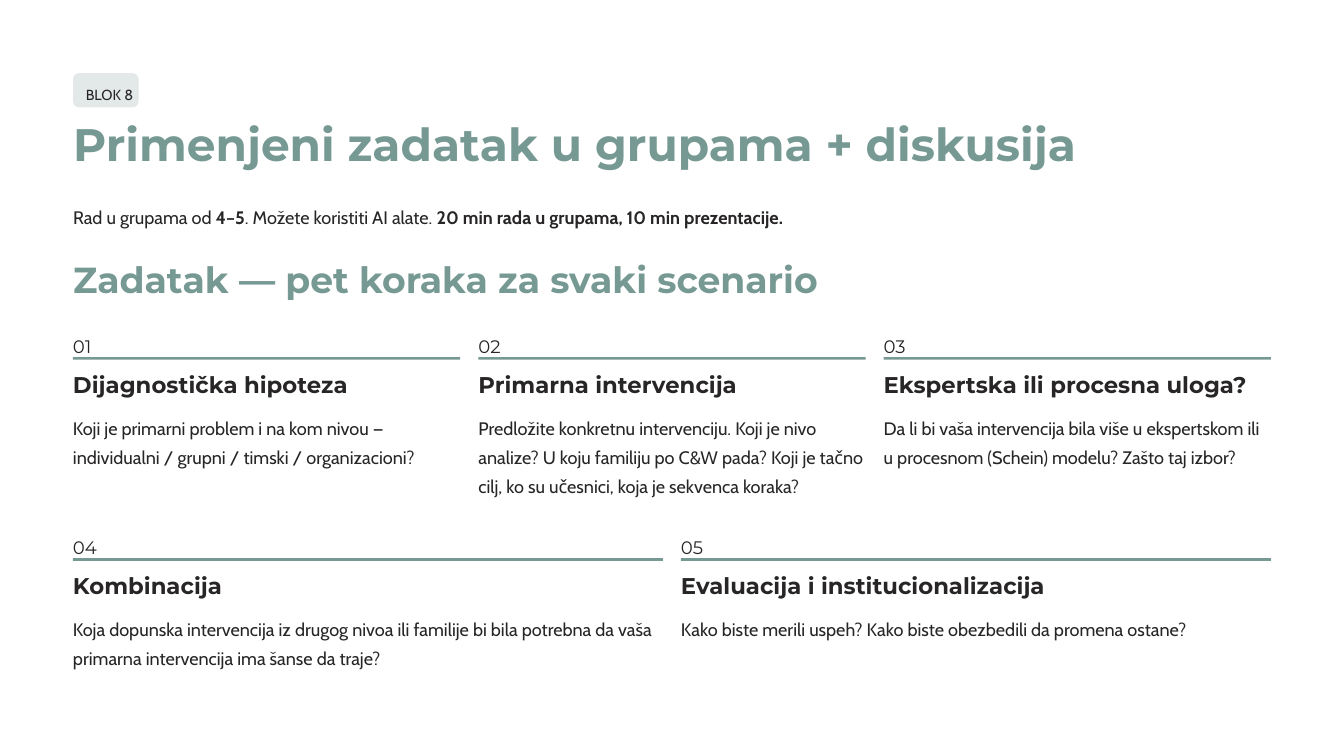
"""Build the slide for block 8: a group task in five numbered steps."""
from pptx import Presentation
from pptx.dml.color import RGBColor
from pptx.enum.shapes import MSO_SHAPE as Shape
from pptx.enum.text import MSO_ANCHOR as Anchor, MSO_AUTO_SIZE as AutoSize, PP_ALIGN as Align
from pptx.util import Pt

WHITE = RGBColor(0xFF, 0xFF, 0xFF)
SAGE = RGBColor(0x76, 0x99, 0x93)
MIST = RGBColor(0xE2, 0xE9, 0xE8)
INK = RGBColor(0x27, 0x25, 0x25)

LEFT = 62.6
WIDTH = 1026.8
GAP = 15.5

STEP_ROWS = [
    (281.3, [
        ("Dijagnostička hipoteza",
         "Koji je primarni problem i na kom nivou — individualni / grupni / timski / organizacioni?"),
        ("Primarna intervencija",
         "Predložite konkretnu intervenciju. Koji je nivo analize? U koju familiju po C&W pada? "
         "Koji je tačno cilj, ko su učesnici, koja je sekvenca koraka?"),
        ("Ekspertska ili procesna uloga?",
         "Da li bi vaša intervencija bila više u ekspertskom ili u procesnom (Schein) modelu? "
         "Zašto taj izbor?"),
    ]),
    (453.7, [
        ("Kombinacija",
         "Koja dopunska intervencija iz drugog nivoa ili familije bi bila potrebna da vaša "
         "primarna intervencija ima šanse da traje?"),
        ("Evaluacija i institucionalizacija",
         "Kako biste merili uspeh? Kako biste obezbedili da promena ostane?"),
    ]),
]


def write(box, text, size=15.5, line=25, font="Cabin", color=INK, bold=False, inset=(0, 0)):
    """Fill a box with one paragraph; parts between ** marks switch the weight."""
    frame = box.text_frame
    frame.word_wrap = True
    frame.auto_size = AutoSize.NONE
    frame.vertical_anchor = Anchor.TOP
    frame.margin_left, frame.margin_top = Pt(inset[0]), Pt(inset[1])
    frame.margin_right = frame.margin_bottom = 0
    para = frame.paragraphs[0]
    para.alignment = Align.LEFT
    para.line_spacing = Pt(line)
    para.space_before = Pt(0)
    for index, part in enumerate(text.split("**")):
        if part:
            span = para.add_run()
            span.text = part
            span.font.name = font
            span.font.size = Pt(size)
            span.font.bold = bold != (index % 2 == 1)
            span.font.color.rgb = color


class TaskPage:
    """Hold the current slide and its heading style."""

    def __init__(self, page, heading_font="Montserrat"):
        self.page = page
        self.heading_font = heading_font
        fill = page.background.fill
        fill.solid()
        fill.fore_color.rgb = WHITE

    def title(self, text, left, top, width, height):
        """Place and format the title placeholder."""
        box = self.page.shapes.title
        box.left, box.top, box.width, box.height = map(Pt, (left, top, width, height))
        write(box, text, size=39, line=48.5, font=self.heading_font, color=SAGE, bold=True)

    def text(self, text, left, top, width, height, **style):
        """Add a text box."""
        box = self.page.shapes.add_textbox(*map(Pt, (left, top, width, height)))
        write(box, text, **style)

    def heading(self, text, left, top, width, height, **style):
        """Add a text box in the heading font."""
        self.text(text, left, top, width, height, font=self.heading_font, **style)

    def block(self, kind, color, left, top, width, height):
        """Add a flat filled shape."""
        shape = self.page.shapes.add_shape(kind, *map(Pt, (left, top, width, height)))
        shape.shadow.inherit = False
        shape.fill.solid()
        shape.fill.fore_color.rgb = color
        shape.line.fill.background()
        return shape

    def badge(self, text, left, top, width, height):
        """Add a rounded label."""
        shape = self.block(Shape.ROUNDED_RECTANGLE, MIST, left, top, width, height)
        shape.adjustments[0] = 0.18
        write(shape, text, size=12.5, line=20, inset=(9.4, 4.3))

    def step(self, number, name, question, left, top, width):
        """Add one numbered step with its rule, name and question."""
        self.heading(f"{number:02}", left, top, 31, 19.5)
        self.block(Shape.RECTANGLE, SAGE, left, top + 24.8, width, 2.2)
        self.heading(name, left, top + 36, width, 24.5, size=19.5, line=24, bold=True)
        self.text(question, left, top + 70, width, 75)


def main():
    """Build and save the deck."""
    deck = Presentation()
    deck.slide_width, deck.slide_height = Pt(1152), Pt(648)
    task = TaskPage(deck.slides.add_slide(deck.slide_layouts[5]))
    task.badge("BLOK 8", LEFT, 62.6, 56.2, 29.5)
    task.title("Primenjeni zadatak u grupama + diskusija", LEFT, 98, WIDTH, 49)
    task.text("Rad u grupama od **4–5**. Možete koristiti AI alate. "
              "**20 min rada u grupama, 10 min prezentacije.**", LEFT, 170.6, WIDTH, 25)
    task.heading("Zadatak — pet koraka za svaki scenario", LEFT, 219, WIDTH, 39,
                 size=31, line=39, color=SAGE, bold=True)
    number = 0
    for top, steps in STEP_ROWS:
        width = (WIDTH - GAP * (len(steps) - 1)) / len(steps)
        for column, (name, question) in enumerate(steps):
            number += 1
            task.step(number, name, question, LEFT + column * (width + GAP), top, width)
    deck.save("out.pptx")


if __name__ == "__main__":
    main()
